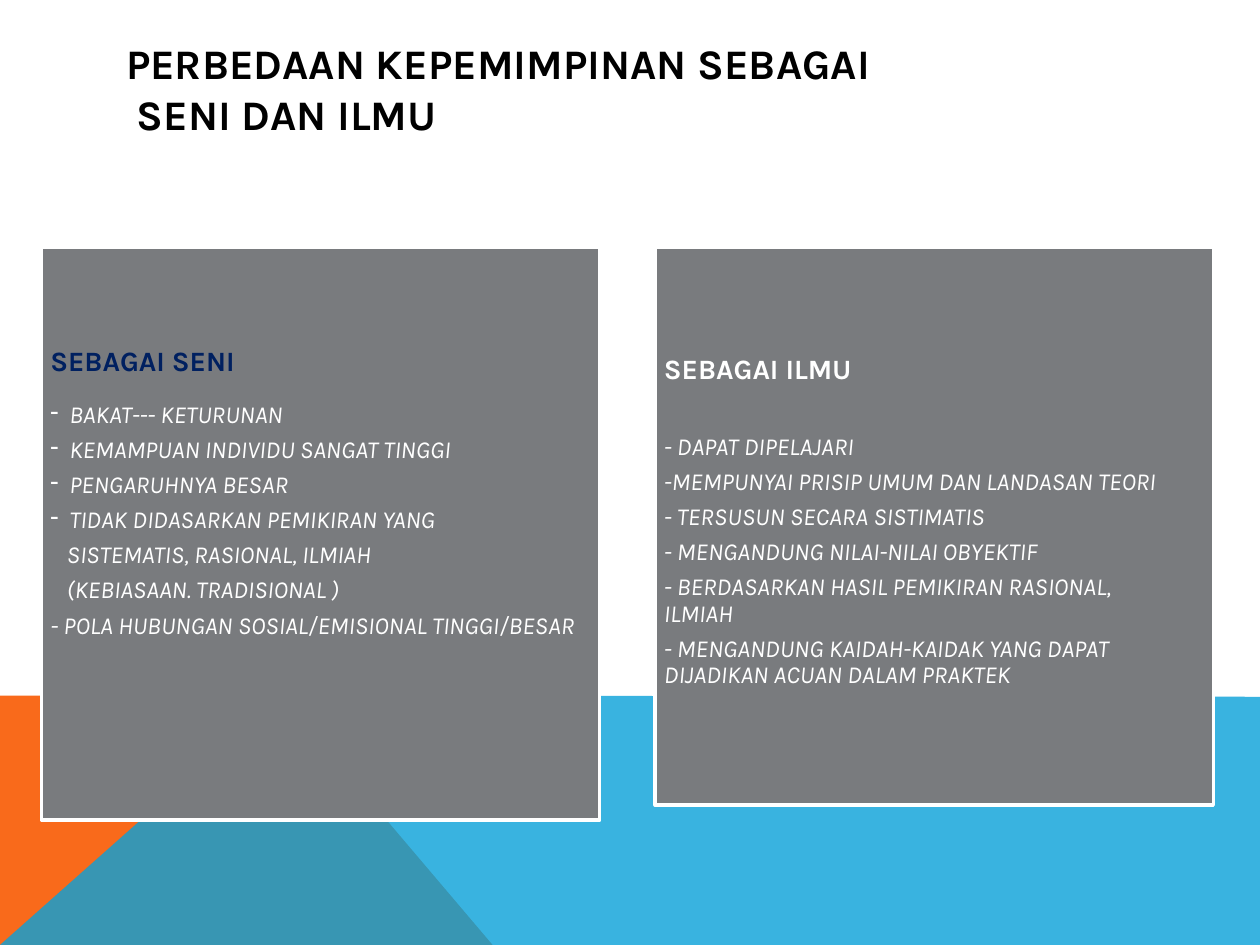
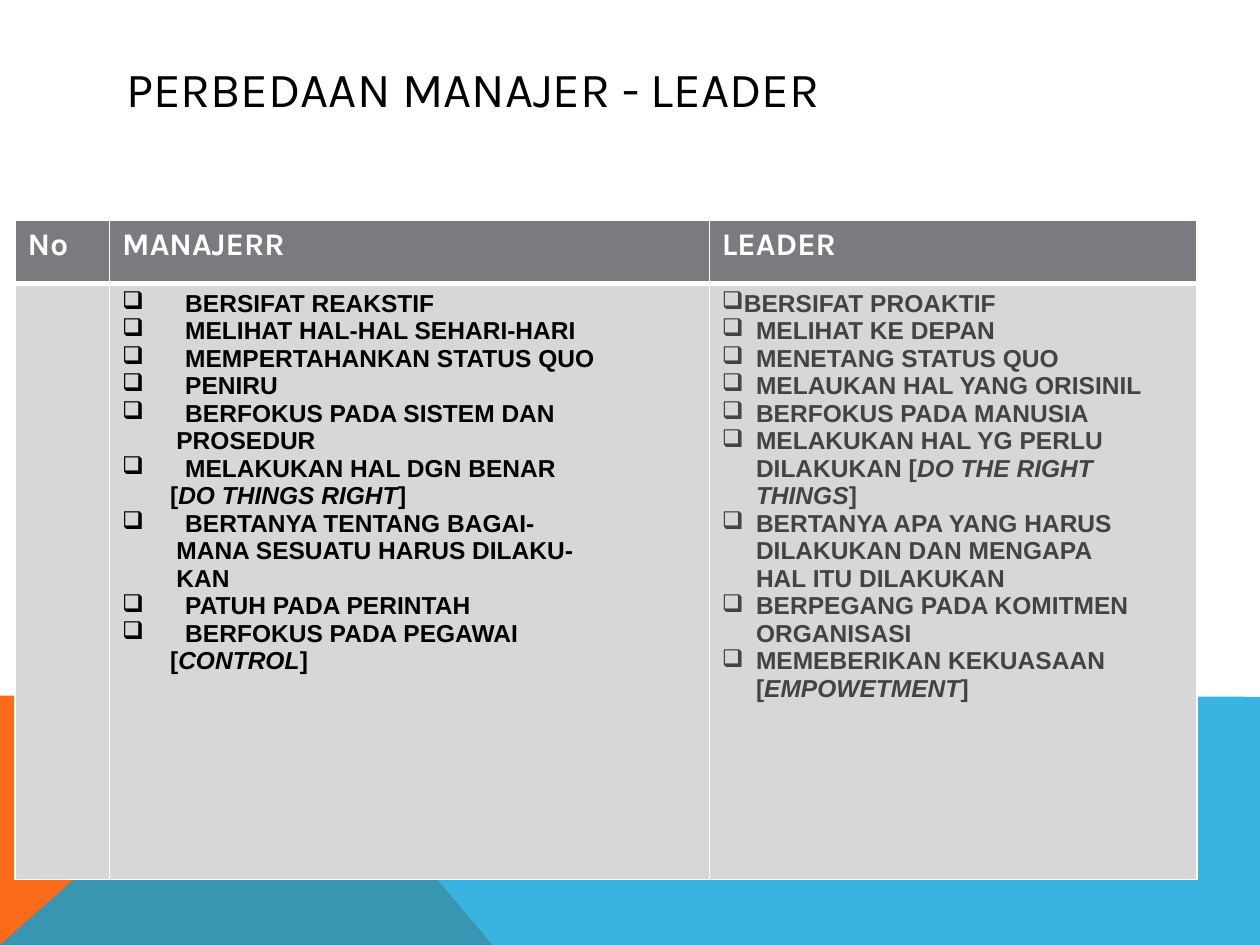
from lxml import etree
from pptx import Presentation
from pptx.dml.color import RGBColor
from pptx.enum.shapes import MSO_SHAPE
from pptx.enum.text import MSO_ANCHOR, MSO_AUTO_SIZE, PP_ALIGN
from pptx.oxml.ns import qn
from pptx.util import Inches, Pt

RECTANGLE = MSO_SHAPE.RECTANGLE
TOP, MIDDLE = MSO_ANCHOR.TOP, MSO_ANCHOR.MIDDLE
LEFT = PP_ALIGN.LEFT
NO_AUTOFIT = MSO_AUTO_SIZE.NONE

WHITE = RGBColor(0xFF, 0xFF, 0xFF)
BLACK = RGBColor(0, 0, 0)
NAVY = RGBColor(0x00, 0x20, 0x60)
CHARCOAL = RGBColor(0x43, 0x43, 0x42)
GREY = RGBColor(0x79, 0x7B, 0x7E)
PALE_GREY = RGBColor(0xD7, 0xD7, 0xD8)
ORANGE = RGBColor(0xF9, 0x6A, 0x1B)
BLUE = RGBColor(0x08, 0xA1, 0xD9)
THEME_FONT, LIST_FONT = "Karla", "Arial"

BANDS = [
    (ORANGE, 100, [(0, 7.5), (0, 5.52), (2.23, 5.52), (3.91, 7.5)]),
    (BLUE, 80, [(0, 7.5), (2.23, 5.52), (10, 5.53), (10, 7.5)]),
]

ART_SCIENCE_TITLE = "PERBEDAAN KEPEMIMPINAN SEBAGAI\v SENI DAN ILMU"
CARDS = [
    dict(heading="SEBAGAI SENI", color=NAVY, left=0.33, height=4.55,
         text_top=0.8, heading_gap=14, points=[
             ("-", 0.15, "BAKAT--- KETURUNAN"),
             ("-", 0.15, "KEMAMPUAN INDIVIDU SANGAT TINGGI"),
             ("-", 0.15, "PENGARUHNYA BESAR"),
             ("-", 0.15, "TIDAK DIDASARKAN PEMIKIRAN YANG"),
             ("", 0.13, "SISTEMATIS, RASIONAL, ILMIAH"),
             ("", 0.13, "(KEBIASAAN. TRADISIONAL )"),
             ("", 0, "- POLA HUBUNGAN SOSIAL/EMISIONAL TINGGI/BESAR"),
         ]),
    dict(heading="SEBAGAI ILMU", color=WHITE, left=5.2, height=4.43,
         text_top=0.86, heading_gap=28, points=[
             ("", 0, "- DAPAT DIPELAJARI"),
             ("", 0, "-MEMPUNYAI PRISIP UMUM DAN LANDASAN TEORI"),
             ("", 0, "- TERSUSUN SECARA SISTIMATIS"),
             ("", 0, "- MENGANDUNG NILAI-NILAI OBYEKTIF"),
             ("", 0, "- BERDASARKAN HASIL PEMIKIRAN RASIONAL,\vILMIAH"),
             ("", 0, "- MENGANDUNG KAIDAH-KAIDAK YANG DAPAT DIJADIKAN ACUAN DALAM PRAKTEK"),
         ]),
]

MANAGER_LEADER_TITLE = "PERBEDAAN MANAJER - LEADER"
HEADERS = ["No", "MANAJERR", "LEADER"]
COLUMN_WIDTHS = [0.75, 4.76, 3.87]
ROW_HEIGHTS = [0.5, 4.73]
BOX = "❑"
# Every second text segment is italic.
MANAGER = [
    (BOX, 0.5, "BERSIFAT REAKSTIF"),
    (BOX, 0.5, "MELIHAT HAL-HAL SEHARI-HARI"),
    (BOX, 0.5, "MEMPERTAHANKAN STATUS QUO"),
    (BOX, 0.5, "PENIRU"),
    (BOX, 0.5, "BERFOKUS PADA SISTEM DAN"),
    ("", 0.43, "PROSEDUR"),
    (BOX, 0.5, "MELAKUKAN HAL DGN BENAR"),
    ("", 0.38, "[", "DO THINGS RIGHT", "]"),
    (BOX, 0.5, "BERTANYA TENTANG BAGAI-"),
    ("", 0.43, "MANA SESUATU HARUS DILAKU-"),
    ("", 0.43, "KAN"),
    (BOX, 0.5, "PATUH PADA PERINTAH"),
    (BOX, 0.5, "BERFOKUS PADA PEGAWAI"),
    ("", 0.38, "[", "CONTROL", "]"),
]
LEADER = [
    (BOX, 0.17, "BERSIFAT PROAKTIF"),
    (BOX, 0.27, "MELIHAT KE DEPAN"),
    (BOX, 0.27, "MENETANG STATUS QUO"),
    (BOX, 0.27, "MELAUKAN HAL YANG ORISINIL"),
    (BOX, 0.27, "BERFOKUS PADA MANUSIA"),
    (BOX, 0.27, "MELAKUKAN HAL YG PERLU"),
    ("", 0.27, "DILAKUKAN [", "DO THE RIGHT"),
    ("", 0.27, "", "THINGS", "]"),
    (BOX, 0.27, "BERTANYA APA YANG HARUS"),
    ("", 0.27, "DILAKUKAN DAN MENGAPA"),
    ("", 0.27, "HAL ITU DILAKUKAN"),
    (BOX, 0.27, "BERPEGANG PADA KOMITMEN"),
    ("", 0.27, "ORGANISASI"),
    (BOX, 0.27, "MEMEBERIKAN KEKUASAAN"),
    ("", 0.27, "[", "EMPOWETMENT", "]"),
]


def add_text(paragraph, text, size, color, font=THEME_FONT, bold=False, italic=False):
    for index, line in enumerate(text.split("\v")):
        if index:
            paragraph.add_line_break()
        run = paragraph.add_run()
        run.text = line
        run.font.name, run.font.size = font, Pt(size)
        run.font.bold, run.font.italic = bold, italic
        run.font.color.rgb = color


def indent(paragraph, bullet, margin):
    properties = paragraph._p.get_or_add_pPr()
    properties.set("marL", str(Inches(margin)))
    properties.set("indent", str(-Inches(margin) if bullet else 0))
    if bullet:
        etree.SubElement(properties, qn("a:buChar")).set("char", bullet)
    else:
        etree.SubElement(properties, qn("a:buNone"))


def add_band(slide, color, opacity, corners):
    points = [(Inches(x), Inches(y)) for x, y in corners]
    builder = slide.shapes.build_freeform(*points[0], scale=1.0)
    builder.add_line_segments(points[1:], close=True)
    band = builder.convert_to_shape()
    band.shadow.inherit = False
    band.fill.solid()
    band.fill.fore_color.rgb = color
    band.line.fill.background()
    if opacity < 100:
        tint = band._element.spPr.find(qn("a:solidFill"))[0]
        etree.SubElement(tint, qn("a:alpha")).set("val", str(opacity * 1000))


def add_slide(deck, heading, size, bold):
    slide = deck.slides.add_slide(deck.slide_layouts[5])
    for band in BANDS:
        add_band(slide, *band)
    title = slide.shapes.title
    title.left, title.top = Inches(0.9), Inches(0.4)
    title.width, title.height = Inches(8.22), Inches(0.6)
    frame = title.text_frame
    frame.auto_size, frame.vertical_anchor = NO_AUTOFIT, MIDDLE
    paragraph = frame.paragraphs[0]
    paragraph.alignment = LEFT
    add_text(paragraph, heading, size, BLACK, bold=bold)
    return slide


def add_card(slide, heading, color, left, height, text_top, heading_gap, points):
    card = slide.shapes.add_shape(RECTANGLE, Inches(left), Inches(1.96),
                                  Inches(4.43), Inches(height))
    card.shadow.inherit = False
    card.fill.solid()
    card.fill.fore_color.rgb = GREY
    card.line.color.rgb, card.line.width = WHITE, Pt(2)
    frame = card.text_frame
    frame.word_wrap, frame.vertical_anchor = True, TOP
    frame.margin_left = frame.margin_right = frame.margin_bottom = Inches(0.07)
    frame.margin_top = Inches(text_top)
    paragraph = frame.paragraphs[0]
    add_text(paragraph, heading, 16, color, bold=True)
    paragraph.space_after = Pt(heading_gap)
    for bullet, margin, text in points:
        paragraph = frame.add_paragraph()
        paragraph.space_after = Pt(4.9)
        indent(paragraph, bullet, margin)
        add_text(paragraph, text, 14, WHITE, italic=True)
    for paragraph in frame.paragraphs:
        paragraph.alignment, paragraph.line_spacing = LEFT, 0.9


def style_cell(cell, fill, edges):
    properties = cell._tc.get_or_add_tcPr()
    for side, width in edges.items():
        edge = etree.SubElement(properties, qn(f"a:{side}"), w=str(Pt(width)))
        paint = etree.SubElement(edge, qn("a:solidFill"))
        etree.SubElement(paint, qn("a:srgbClr"), val=str(WHITE))
    cell.fill.solid()
    cell.fill.fore_color.rgb = fill


def fill_list(cell, items, color):
    frame = cell.text_frame
    for index, (bullet, margin, *segments) in enumerate(items):
        paragraph = frame.add_paragraph() if index else frame.paragraphs[0]
        indent(paragraph, bullet, margin)
        for position, segment in enumerate(segments):
            if segment:
                add_text(paragraph, segment, 14, color, LIST_FONT, True, position % 2 == 1)


def add_comparison(slide):
    table = slide.shapes.add_table(2, 3, Inches(0.12), Inches(1.75),
                                   Inches(sum(COLUMN_WIDTHS)),
                                   Inches(sum(ROW_HEIGHTS))).table
    for column, width in zip(table.columns, COLUMN_WIDTHS):
        column.width = Inches(width)
    for row, height in zip(table.rows, ROW_HEIGHTS):
        row.height = Inches(height)
    for index, header in enumerate(HEADERS):
        style_cell(table.cell(0, index), GREY, dict(lnL=1, lnR=1, lnT=1, lnB=3))
        style_cell(table.cell(1, index), PALE_GREY, dict(lnL=1, lnR=1, lnT=3, lnB=1))
        add_text(table.cell(0, index).text_frame.paragraphs[0], header, 18, WHITE, bold=True)
    fill_list(table.cell(1, 1), MANAGER, BLACK)
    fill_list(table.cell(1, 2), LEADER, CHARCOAL)


def main():
    deck = Presentation()
    deck.slide_width, deck.slide_height = Inches(10), Inches(7.5)
    art_science = add_slide(deck, ART_SCIENCE_TITLE, 24, True)
    for card in CARDS:
        add_card(art_science, **card)
    add_comparison(add_slide(deck, MANAGER_LEADER_TITLE, 28, False))
    deck.save("out.pptx")


if __name__ == "__main__":
    main()
